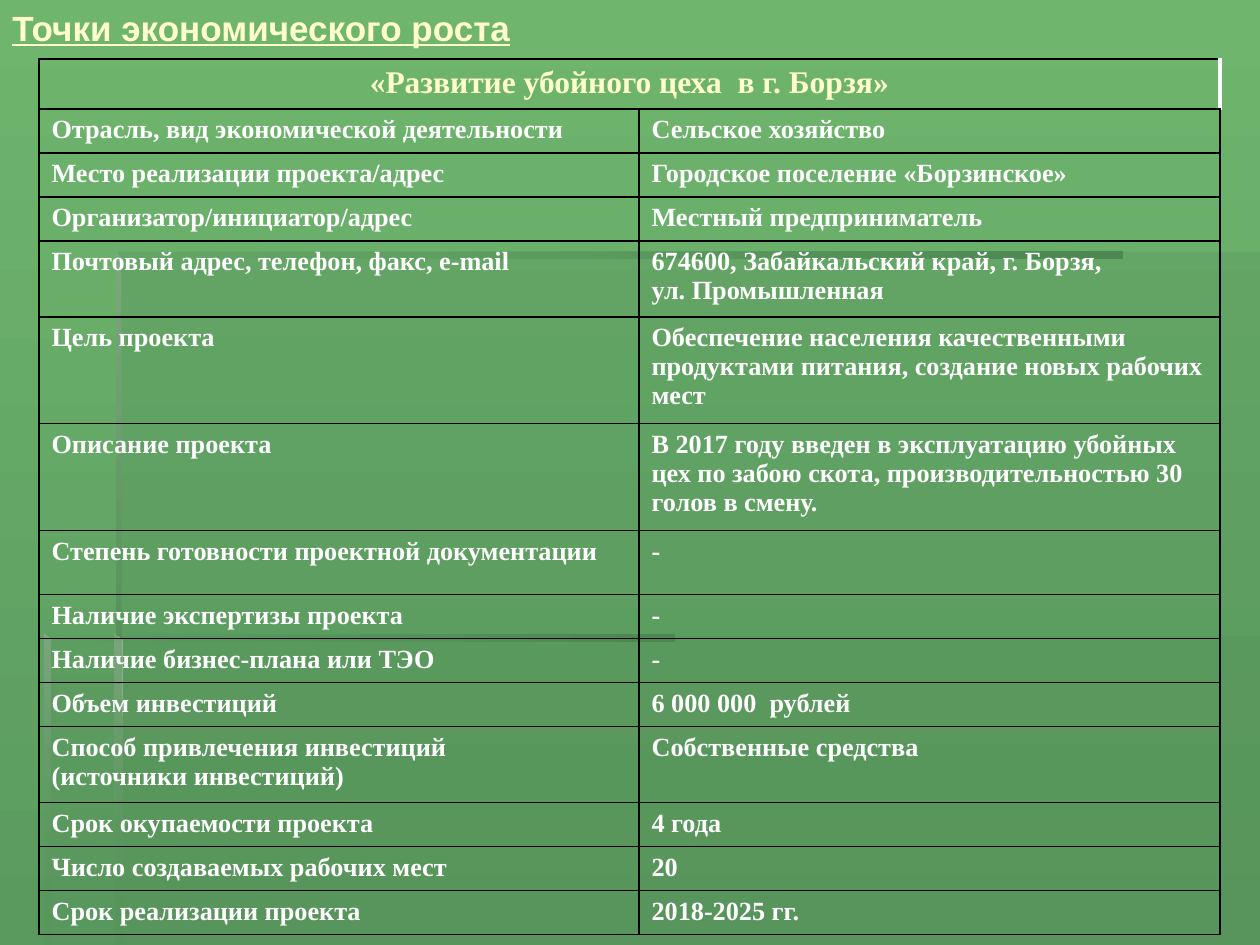
from lxml import etree
from pptx import Presentation
from pptx.dml.color import RGBColor
from pptx.enum.text import MSO_AUTO_SIZE, PP_ALIGN
from pptx.oxml.ns import qn
from pptx.util import Emu, Pt

PX = 914400 // 126
COLORS = {
    "bg_top": "6FB56D", "bg_bottom": "5A9A5F",
    "panel": "56925A", "dark": "4F8653", "light": "7DA57F",
    "cream": "FFFFCC", "white": "FFFFFF", "black": "000000",
}
HORIZONTAL, VERTICAL = 0, 270


def set_gradient(fill, angle, stops):
    """Apply two (colour, opacity percent) stops to a fill."""
    fill.gradient()
    fill.gradient_angle = angle
    for stop, (color, opacity) in zip(fill.gradient_stops, stops):
        stop.color.rgb = RGBColor.from_string(COLORS[color])
        if opacity < 100:
            clr = stop._gs.find(qn("a:srgbClr"))
            etree.SubElement(clr, qn("a:alpha"), val=str(opacity * 1000))


def set_border(cell, side, color, width):
    tcPr = cell._tc.get_or_add_tcPr()
    ln = etree.SubElement(tcPr, qn(f"a:ln{side}"), w=str(Pt(width)))
    fill = etree.SubElement(ln, qn("a:solidFill"))
    etree.SubElement(fill, qn("a:srgbClr"), val=COLORS[color])


prs = Presentation()
prs.slide_width = Emu(1260 * PX)
prs.slide_height = Emu(945 * PX)
s = prs.slides.add_slide(prs.slide_layouts[6])
set_gradient(s.background.fill, VERTICAL, [("bg_top", 100), ("bg_bottom", 100)])

# Background panels and their bevelled edges: points, direction, colour stops
panel = [("panel", 30), ("panel", 30)]
shade = [("panel", 0), ("dark", 100)]
decor = [
    ([(116, 636), (116, 945), (1260, 945), (1260, 636)], HORIZONTAL, panel),
    ([(118, 638), (45, 638), (45, 945), (1260, 945), (1260, 252), (118, 252)],
     HORIZONTAL, panel),
    ([(116, 252), (116, 258), (1123, 258), (1123, 252)], HORIZONTAL, shade),
    ([(116, 252), (116, 643), (122, 643), (121, 257)], VERTICAL,
     [("light", 100), ("panel", 100)]),
    ([(115, 945), (122, 945), (121, 640), (115, 635)], VERTICAL,
     [("light", 100), ("panel", 0)]),
    ([(44, 635), (44, 641), (674, 641), (674, 635)], HORIZONTAL, shade),
    ([(44, 635), (44, 945), (50, 945), (50, 641)], VERTICAL,
     [("light", 100), ("panel", 10)]),
]
for points, angle, stops in decor:
    builder = s.shapes.build_freeform(*points[0], scale=PX)
    builder.add_line_segments(points[1:], close=True)
    sp = builder.convert_to_shape()
    sp.shadow.inherit = False
    sp.line.fill.background()
    set_gradient(sp.fill, angle, stops)

# Project table: row height, label, value
rows = [
    (50, "«Развитие убойного цеха  в г. Борзя»", ""),
    (44, "Отрасль, вид экономической деятельности", "Сельское хозяйство"),
    (44, "Место реализации проекта/адрес", "Городское поселение «Борзинское»"),
    (44, "Организатор/инициатор/адрес", "Местный предприниматель"),
    (76, "Почтовый адрес, телефон, факс, e-mail",
     "674600, Забайкальский край, г. Борзя,\nул. Промышленная"),
    (107, "Цель проекта",
     "Обеспечение населения качественными продуктами питания, "
     "создание новых рабочих мест"),
    (107, "Описание проекта",
     "В 2017 году введен в эксплуатацию убойных цех по забою скота, "
     "производительностью 30 голов в смену."),
    (64, "Степень готовности проектной документации", "-"),
    (44, "Наличие экспертизы проекта", "-"),
    (44, "Наличие бизнес-плана или ТЭО", "-"),
    (44, "Объем инвестиций", "6 000 000  рублей"),
    (76, "Способ привлечения инвестиций\n(источники инвестиций)",
     "Собственные средства"),
    (44, "Срок окупаемости проекта", "4 года"),
    (44, "Число создаваемых рабочих мест", "20"),
    (44, "Срок реализации проекта", "2018-2025 гг."),
]
col_widths = [600, 581]
height = sum(row[0] for row in rows)
table = s.shapes.add_table(len(rows), 2, 39 * PX, 59 * PX,
                           sum(col_widths) * PX, height * PX).table
table.first_row = table.horz_banding = False
for col, width in zip(table.columns, col_widths):
    col.width = Emu(width * PX)

for i, (row_height, *texts) in enumerate(rows):
    table.rows[i].height = Emu(row_height * PX)
    heading = i == 0
    for j, text in enumerate(texts):
        cell = table.cell(i, j)
        for side in "LRTB":
            if heading and side == "R":
                set_border(cell, side, "white", 2.25)
            else:
                set_border(cell, side, "black", 1)
        cell.fill.background()
        cell.text_frame.text = text
        for p in cell.text_frame.paragraphs:
            p.alignment = PP_ALIGN.CENTER if heading else PP_ALIGN.LEFT
            for r in p.runs:
                r.font.name = "Times New Roman"
                r.font.size = Pt(18 if heading else 15)
                r.font.bold = True
                r.font.color.rgb = RGBColor.from_string(
                    COLORS["cream" if heading else "white"])
table.cell(0, 0).merge(table.cell(0, 1))

# Slide title
tf = s.shapes.add_textbox(0, 0, 527 * PX, 55 * PX).text_frame
tf.word_wrap = False
tf.auto_size = MSO_AUTO_SIZE.SHAPE_TO_FIT_TEXT
tf.text = "Точки экономического роста"
font = tf.paragraphs[0].runs[0].font
font.name = "Arial"
font.size = Pt(20)
font.bold = font.underline = True
font.color.rgb = RGBColor.from_string(COLORS["cream"])

prs.save("out.pptx")
